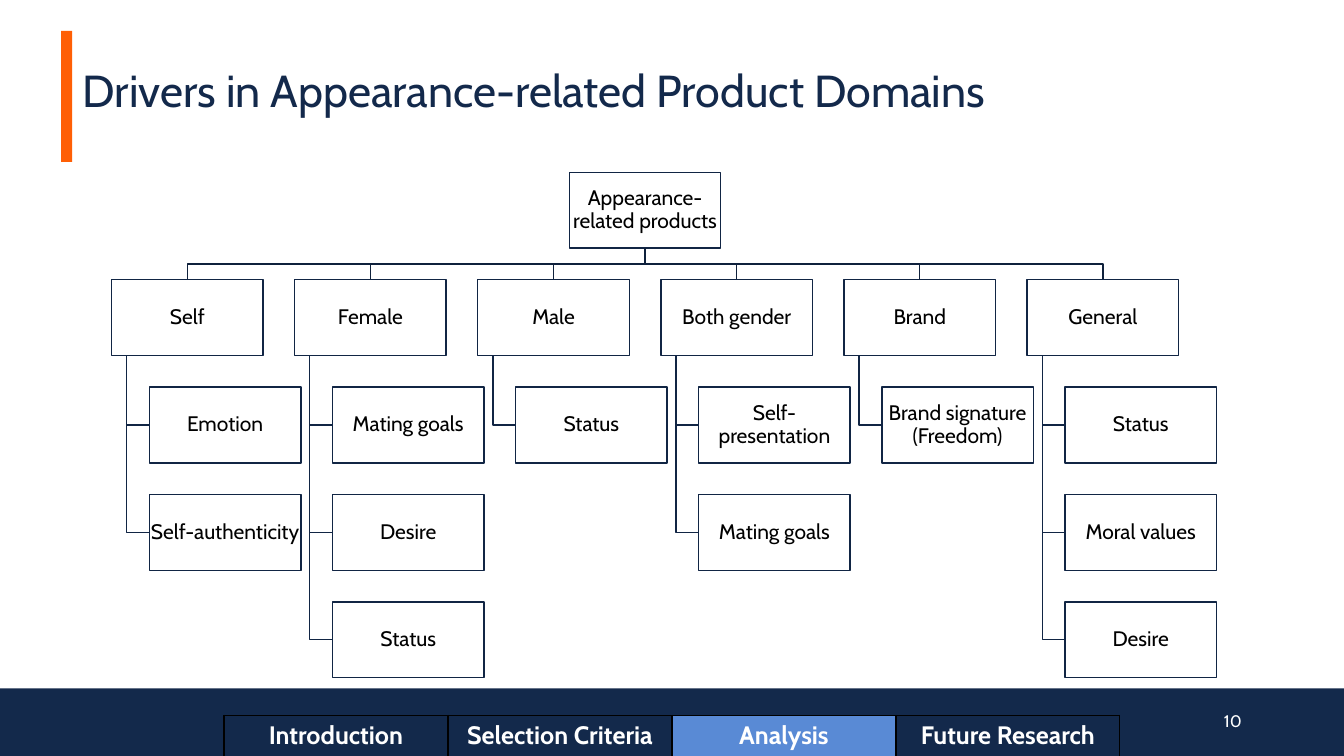
from lxml import etree
from pptx import Presentation
from pptx.dml.color import RGBColor
from pptx.enum.shapes import MSO_SHAPE
from pptx.enum.text import MSO_ANCHOR, PP_ALIGN
from pptx.oxml import parse_xml
from pptx.oxml.ns import nsdecls
from pptx.util import Pt

RECTANGLE = MSO_SHAPE.RECTANGLE
MIDDLE = MSO_ANCHOR.MIDDLE
LEFT, CENTER, RIGHT = PP_ALIGN.LEFT, PP_ALIGN.CENTER, PP_ALIGN.RIGHT

COLORS = {
    "navy": "13294B",
    "branch": "112544",
    "trunk": "0F213C",
    "orange": "FF5F05",
    "active": "598AD5",
    "white": "FFFFFF",
    "black": "000000",
}

SLIDE_W, SLIDE_H = 960, 540
BOX_W, BOX_H = 108.2, 54.1
TREE_CENTER = 460.8
TREE_TOP = 123.1
COLUMN_STEP = 130.8
LEVEL_STEP = 76.7
DRIVER_INDENT = 27
STEM_INDENT = 10.8

ROOT = "Appearance-related products"
DRIVERS = {
    "Self": ["Emotion", "Self-authenticity"],
    "Female": ["Mating goals", "Desire", "Status"],
    "Male": ["Status"],
    "Both gender": ["Self-presentation", "Mating goals"],
    "Brand": ["Brand signature (Freedom)"],
    "General": ["Status", "Moral values", "Desire"],
}
SECTIONS = ["Introduction", "Selection Criteria", "Analysis", "Future Research"]
CURRENT_SECTION = "Analysis"


def rgb(color):
    return RGBColor.from_string(COLORS[color])


class SlideBuilder:
    font_name = "Cabin"
    line_width = 1

    def __init__(self, slide):
        self.slide = slide

    def set_text(self, frame, words, size, color, align=CENTER, spacing=None, bold=False):
        frame.word_wrap = True
        frame.vertical_anchor = MIDDLE
        paragraph = frame.paragraphs[0]
        paragraph.text = words
        paragraph.alignment = align
        if spacing:
            paragraph.line_spacing = spacing
        font = paragraph.font
        font.name = self.font_name
        font.size = Pt(size)
        font.bold = bold
        font.color.rgb = rgb(color)

    def text(self, x, y, w, h, words, size, color, **options):
        box = self.slide.shapes.add_textbox(Pt(x), Pt(y), Pt(w), Pt(h))
        self.set_text(box.text_frame, words, size, color, **options)

    def block(self, x, y, w, h, fill):
        shape = self.slide.shapes.add_shape(RECTANGLE, Pt(x), Pt(y), Pt(w), Pt(h))
        shape.shadow.inherit = False
        shape.fill.solid()
        shape.fill.fore_color.rgb = rgb(fill)
        shape.line.fill.background()
        return shape

    def node(self, x, y, words):
        """Draw one outlined box of the tree."""
        box = self.block(x, y, BOX_W, BOX_H, "white")
        box.line.color.rgb = rgb("branch")
        box.line.width = Pt(self.line_width)
        frame = box.text_frame
        frame.margin_left = frame.margin_right = Pt(0.75)
        frame.margin_top = frame.margin_bottom = Pt(0.75)
        self.set_text(frame, words, 15, "black", spacing=0.9)

    def wire(self, points, color):
        """Draw an open line with right-angled corners."""
        start, *corners = [(Pt(x), Pt(y)) for x, y in points]
        builder = self.slide.shapes.build_freeform(*start)
        builder.add_line_segments(corners, close=False)
        line = builder.convert_to_shape()
        line.shadow.inherit = False
        line.fill.background()
        line.line.color.rgb = rgb(color)
        line.line.width = Pt(self.line_width)

    def section_bar(self, x, y, cell_w, h, sections, current):
        bar = self.slide.shapes.add_table(
            1, len(sections), Pt(x), Pt(y), Pt(cell_w * len(sections)), Pt(h)
        ).table
        bar.first_row = bar.horz_banding = False
        for cell, section in zip(bar.rows[0].cells, sections):
            cell.fill.solid()
            cell.fill.fore_color.rgb = rgb("active" if section == current else "navy")
            self.set_text(cell.text_frame, section, 18, "white", bold=True)
            self.border(cell)

    def border(self, cell):
        properties = cell._tc.get_or_add_tcPr()
        for index, side in enumerate(("lnL", "lnR", "lnT", "lnB")):
            edge = parse_xml(f'<a:{side} {nsdecls("a")} w="{Pt(self.line_width)}"/>')
            namespace = "{" + edge.nsmap["a"] + "}"
            fill = etree.SubElement(edge, namespace + "solidFill")
            etree.SubElement(fill, namespace + "srgbClr", val=COLORS["black"])
            properties.insert(index, edge)

    def tree(self, root, branches):
        root_bottom = TREE_TOP + BOX_H
        category_top = TREE_TOP + LEVEL_STEP
        crossbar = (root_bottom + category_top) / 2
        first_center = TREE_CENTER - COLUMN_STEP * (len(branches) - 1) / 2
        self.node(TREE_CENTER - BOX_W / 2, TREE_TOP, root)
        for column, (category, drivers) in enumerate(branches.items()):
            center = first_center + column * COLUMN_STEP
            left = center - BOX_W / 2
            self.wire(
                [(TREE_CENTER, root_bottom), (TREE_CENTER, crossbar),
                 (center, crossbar), (center, category_top)],
                "trunk",
            )
            self.node(left, category_top, category)
            stem = left + STEM_INDENT
            driver_left = left + DRIVER_INDENT
            for level, driver in enumerate(drivers, 1):
                top = category_top + level * LEVEL_STEP
                middle = top + BOX_H / 2
                self.wire(
                    [(stem, category_top + BOX_H), (stem, middle), (driver_left, middle)],
                    "branch",
                )
                self.node(driver_left, top, driver)


def main():
    deck = Presentation()
    deck.slide_width, deck.slide_height = Pt(SLIDE_W), Pt(SLIDE_H)
    page = SlideBuilder(deck.slides.add_slide(deck.slide_layouts[6]))
    page.block(43.6, 22, 7.9, 93.6, "orange")
    page.block(0, 491.8, SLIDE_W, SLIDE_H - 491.8, "navy")
    page.text(51.8, 21.6, 816.5, 93.6, "Drivers in Appearance-related Product Domains",
              32, "navy", align=LEFT, spacing=0.7)
    page.text(678.2, 500.4, 216, 28.8, "10", 12, "white", align=RIGHT)
    page.tree(ROOT, DRIVERS)
    page.section_bar(160, 511, 160, 29.2, SECTIONS, CURRENT_SECTION)
    deck.save("out.pptx")


if __name__ == "__main__":
    main()
